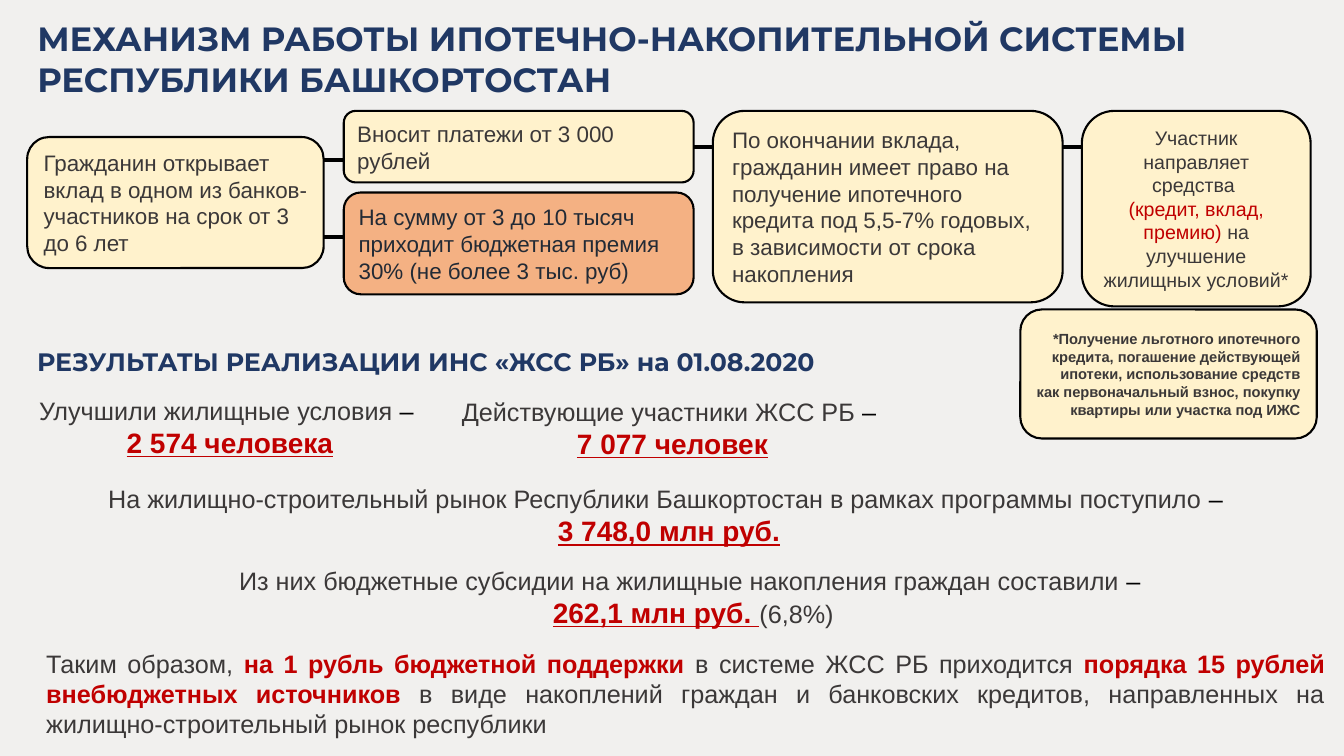
import dataclasses
import typing

import lxml.etree
import pptx
import pptx.dml.color
import pptx.enum.shapes
import pptx.enum.text
import pptx.oxml.ns
import pptx.util

Inches = pptx.util.Inches
Align = pptx.enum.text.PP_ALIGN
Anchor = pptx.enum.text.MSO_ANCHOR


# Colours, fonts and type sizes
@dataclasses.dataclass(frozen=True)
class Theme:
    background: str = "F1F0EE"
    heading: str = "203864"
    text: str = "3B3838"
    premium_text: str = "222A35"
    accent: str = "C00000"
    line: str = "000000"
    card: str = "FFF2CC"
    premium_card: str = "F4B183"
    heading_font: str = "Montserrat"
    body_font: str = "Arial"
    title_size: float = 24
    figure_size: float = 20
    body_size: float = 18
    card_size: float = 16
    outcome_size: float = 14
    footnote_size: float = 10.5


THEME = Theme()


@dataclasses.dataclass(frozen=True)
class Run:
    text: str
    size: float = THEME.body_size
    color: str = THEME.text
    bold: bool = False
    underline: bool = False
    font: str = THEME.body_font


Paragraphs = list[list[Run]]


@dataclasses.dataclass(frozen=True)
class Block:
    left: float
    top: float
    width: float
    height: float
    paragraphs: Paragraphs
    align: Align = Align.LEFT
    fill: str = THEME.card
    wrap: bool = True


def rgb(color: str) -> pptx.dml.color.RGBColor:
    return pptx.dml.color.RGBColor.from_string(color)


def card_text(text: str, color: str = THEME.text) -> Paragraphs:
    return [[Run(text, THEME.card_size, color)]]


def figure(text: str) -> Run:
    return Run(text, THEME.figure_size, THEME.accent, bold=True, underline=True)


def heading(text: str, size: float) -> Run:
    return Run(text, size, THEME.heading, bold=True, font=THEME.heading_font)


def key_phrase(text: str) -> Run:
    return Run(text, color=THEME.accent, bold=True)


# Slide content
TITLE = Block(0.27, 0.13, 12.64, 0.91, [
    [heading("МЕХАНИЗМ РАБОТЫ ИПОТЕЧНО-НАКОПИТЕЛЬНОЙ СИСТЕМЫ ", THEME.title_size)],
    [heading("РЕСПУБЛИКИ БАШКОРТОСТАН", THEME.title_size)],
], Align.JUSTIFY)

CARDS = [
    Block(0.27, 1.36, 2.94, 1.3, card_text(
        "Гражданин открывает вклад в одном из банков-участников на срок от 3 до 6 лет")),
    Block(3.41, 1.1, 3.47, 0.71, card_text("Вносит платежи от 3 000 рублей")),
    Block(7.07, 1.1, 3.47, 1.9, card_text(
        "По окончании вклада, гражданин имеет право на получение ипотечного кредита "
        "под 5,5-7% годовых, в зависимости от срока накопления")),
    Block(3.41, 1.91, 3.47, 1.01, card_text(
        "На сумму от 3 до 10 тысяч приходит бюджетная премия 30% (не более 3 тыс. руб)",
        THEME.premium_text), fill=THEME.premium_card),
    Block(10.73, 1.1, 2.27, 1.94, [
        [Run("Участник направляет средства ", THEME.outcome_size)],
        [Run("(кредит, вклад, премию) ", THEME.outcome_size, THEME.accent),
         Run("на улучшение жилищных условий*", THEME.outcome_size)],
    ], Align.CENTER),
    Block(10.12, 3.07, 2.94, 1.28, [[Run(
        "*Получение льготного ипотечного кредита, погашение действующей ипотеки, "
        "использование средств как первоначальный взнос, покупку квартиры или участка "
        "под ИЖС", THEME.footnote_size, bold=True)]], Align.RIGHT),
]

# Left end and height of each link between cards
LINKS = [(3.21, 1.59), (3.21, 2.35), (6.88, 1.46), (10.53, 1.46)]
LINK_LENGTH = 0.2

DASH = Run(" – ", color=THEME.line)
RESULTS = [
    Block(0.27, 3.39, 8.49, 0.4, [
        [heading("РЕЗУЛЬТАТЫ РЕАЛИЗАЦИИ ИНС «ЖСС РБ» на 01.08.2020", THEME.body_size)],
    ], wrap=False),
    Block(0.27, 3.87, 4.02, 0.74, [
        [Run("Улучшили жилищные условия"), DASH],
        [figure("2 574 человека")],
    ], Align.CENTER, wrap=False),
    Block(4.46, 3.88, 4.42, 0.74, [
        [Run("Действующие участники ЖСС РБ"), DASH],
        [figure("7 077 человек")],
    ], Align.CENTER, wrap=False),
    Block(0.27, 4.75, 12.73, 0.74, [
        [Run("На жилищно-строительный рынок Республики Башкортостан "
             "в рамках программы поступило"), DASH],
        [figure("3 748,0 млн руб.")],
    ], Align.CENTER),
    Block(2.23, 5.56, 9.29, 0.74, [
        [Run("Из них бюджетные субсидии на жилищные накопления граждан составили"), DASH],
        [figure("262,1 млн руб. "), Run("(6,8%)")],
    ], Align.CENTER, wrap=False),
    Block(0.36, 6.38, 12.88, 1.01, [[
        Run("Таким образом, "),
        key_phrase("на 1 рубль бюджетной поддержки "),
        Run("в системе ЖСС РБ приходится "),
        key_phrase("порядка 15 рублей внебюджетных источников "),
        Run("в виде накоплений граждан и банковских кредитов, направленных "
            "на жилищно-строительный рынок республики"),
    ]], Align.JUSTIFY),
]


# Drawing
def write_text(shape: typing.Any, paragraphs: Paragraphs, *, align: Align,
               anchor: Anchor, wrap: bool = True) -> None:
    frame = shape.text_frame
    frame.word_wrap = wrap
    frame.auto_size = pptx.enum.text.MSO_AUTO_SIZE.SHAPE_TO_FIT_TEXT
    frame.vertical_anchor = anchor
    for index, runs in enumerate(paragraphs):
        paragraph = frame.add_paragraph() if index else frame.paragraphs[0]
        paragraph.alignment = align
        for item in runs:
            run = paragraph.add_run()
            run.text = item.text
            run.font.name = item.font
            run.font.size = pptx.util.Pt(item.size)
            run.font.bold = item.bold
            run.font.underline = item.underline
            run.font.color.rgb = rgb(item.color)


def bounds(block: Block) -> list[int]:
    return [Inches(value) for value in (block.left, block.top, block.width, block.height)]


def draw_title(slide: typing.Any, block: Block) -> None:
    title = slide.shapes.title
    title.left, title.top, title.width, title.height = bounds(block)
    write_text(title, block.paragraphs, align=block.align, anchor=Anchor.TOP)


def draw_card(slide: typing.Any, block: Block) -> None:
    shape = slide.shapes.add_shape(
        pptx.enum.shapes.MSO_SHAPE.ROUNDED_RECTANGLE, *bounds(block))
    shape.shadow.inherit = False
    shape.fill.solid()
    shape.fill.fore_color.rgb = rgb(block.fill)
    shape.line.color.rgb = rgb(THEME.line)
    shape.line.width = pptx.util.Pt(1.5)
    write_text(shape, block.paragraphs, align=block.align, anchor=Anchor.MIDDLE)


def draw_text(slide: typing.Any, block: Block) -> None:
    box = slide.shapes.add_textbox(*bounds(block))
    write_text(box, block.paragraphs, align=block.align, anchor=Anchor.TOP, wrap=block.wrap)


def draw_link(slide: typing.Any, left: float, top: float) -> None:
    connector = slide.shapes.add_connector(
        pptx.enum.shapes.MSO_CONNECTOR.STRAIGHT,
        Inches(left), Inches(top), Inches(left + LINK_LENGTH), Inches(top))
    connector.line.color.rgb = rgb(THEME.line)
    connector.line.width = pptx.util.Pt(3)
    lxml.etree.SubElement(connector.element.spPr, pptx.oxml.ns.qn("a:effectLst"))


def main() -> None:
    presentation = pptx.Presentation()
    presentation.slide_width = Inches(13.33)
    presentation.slide_height = Inches(7.5)
    slide = presentation.slides.add_slide(presentation.slide_layouts.get_by_name("Title Only"))
    slide.background.fill.solid()
    slide.background.fill.fore_color.rgb = rgb(THEME.background)

    draw_title(slide, TITLE)
    for left, top in LINKS:
        draw_link(slide, left, top)
    for card in CARDS:
        draw_card(slide, card)
    for result in RESULTS:
        draw_text(slide, result)
    presentation.save("out.pptx")


if __name__ == "__main__":
    main()
